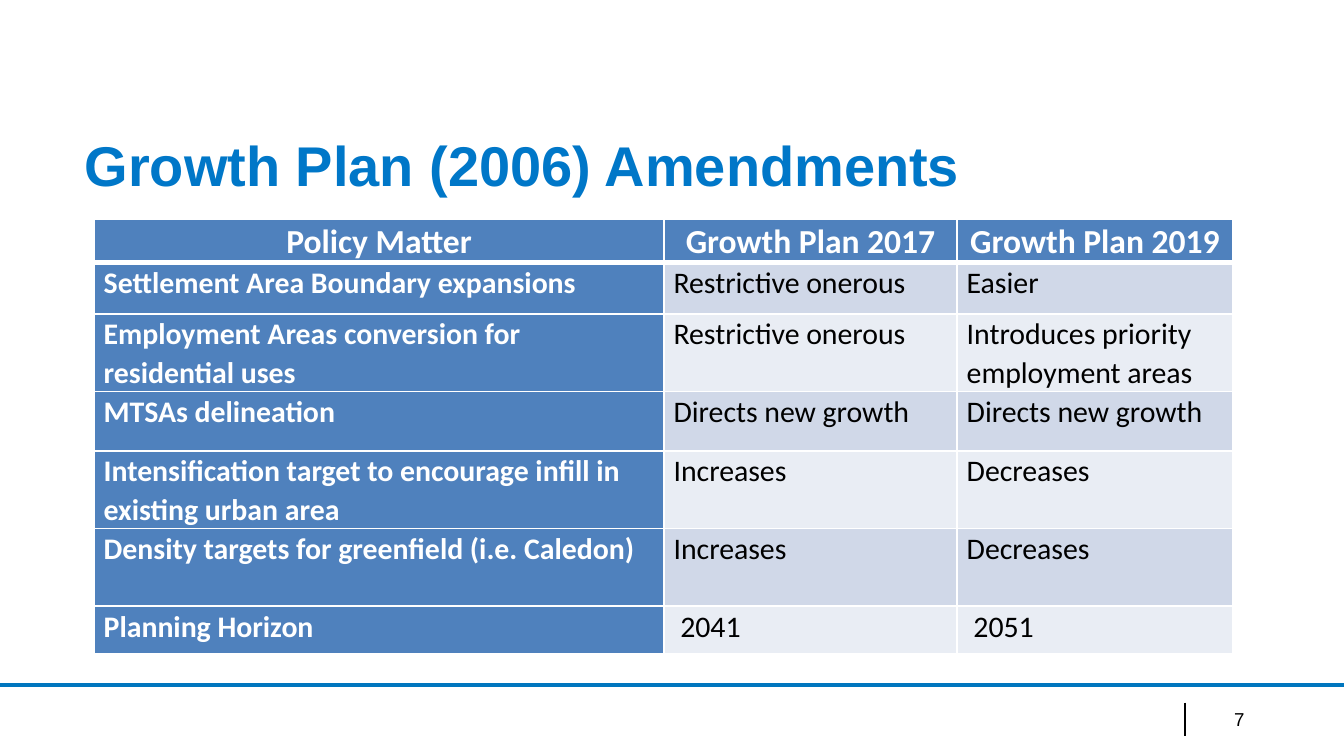
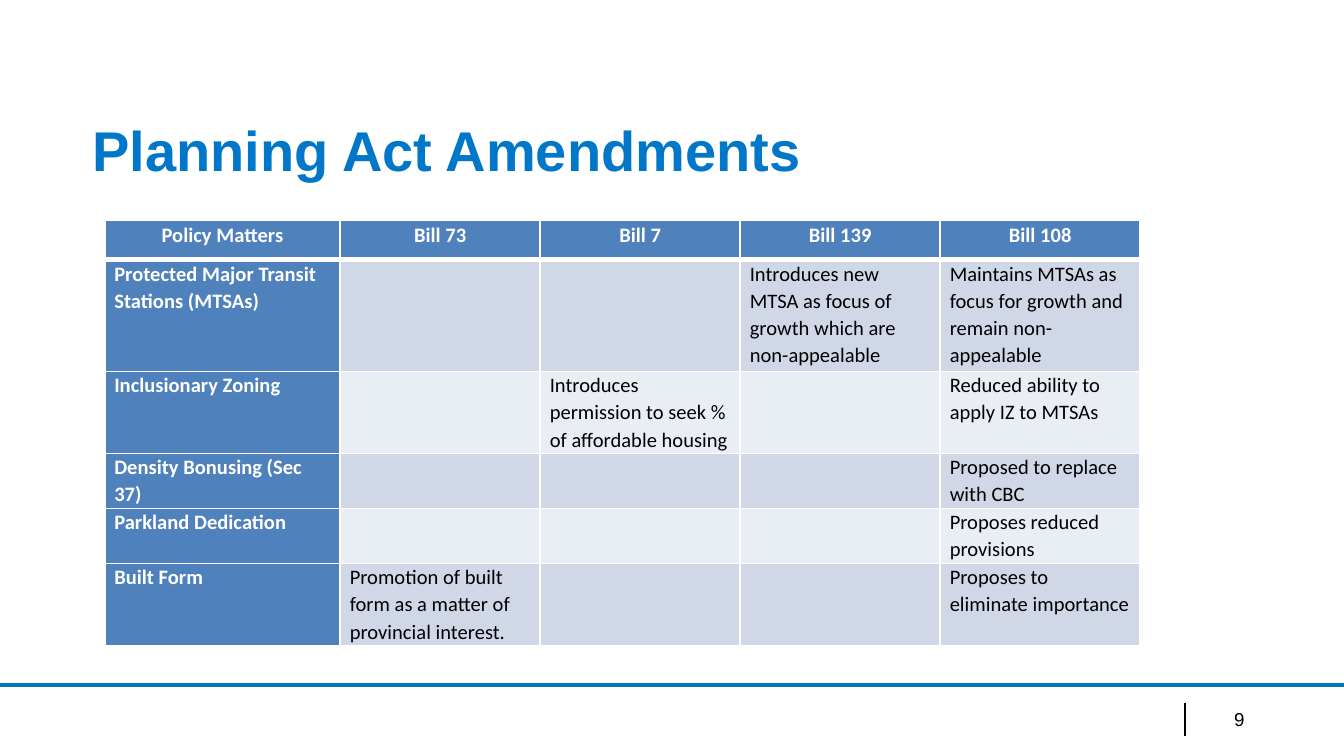
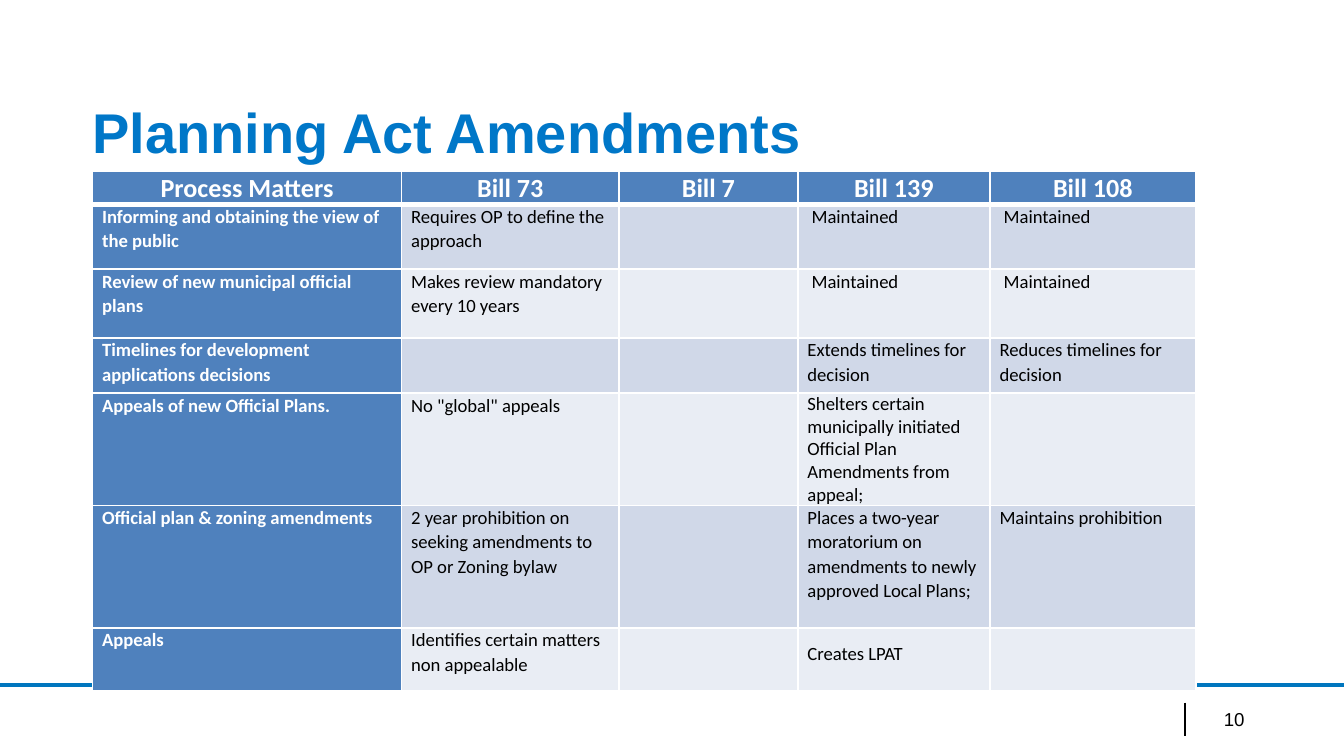
from dataclasses import dataclass

from lxml.etree import SubElement
from pptx import Presentation
from pptx.dml.color import RGBColor
from pptx.enum.shapes import MSO_CONNECTOR
from pptx.enum.text import MSO_ANCHOR as Anchor, PP_ALIGN as Align
from pptx.oxml.ns import qn
from pptx.util import Cm, Pt

TITLE_BLUE = RGBColor(0x00, 0x77, 0xC8)
RULE_BLUE = RGBColor(0x00, 0x76, 0xBE)
HEADER_BLUE = RGBColor(0x4F, 0x81, 0xBD)
BAND_DARK = RGBColor(0xD0, 0xD8, 0xE8)
BAND_LIGHT = RGBColor(0xE9, 0xED, 0xF4)
WHITE = RGBColor(0xFF, 0xFF, 0xFF)
BLACK = RGBColor(0x00, 0x00, 0x00)

SLIDE_WIDTH, SLIDE_HEIGHT = 25.4, 14.29
TITLE_FONT, TABLE_FONT = "Arial", "Calibri"
CELL_MARGIN = 0.18
LINE_SPACING = 1.07
THIN, THICK = 1, 3


@dataclass
class Cell:
    text: str
    line_spacing: float = LINE_SPACING
    margin_top: float = 0


@dataclass
class TableSlide:
    number: int
    title: str
    title_left: float
    title_top: float
    table_left: float
    table_top: float
    columns: list[float]
    rows: list[float]
    header_size: int
    body_size: int
    cells: list[list[str | Cell]]


SLIDES = [
    TableSlide(
        number=7, title="Growth Plan (2006) Amendments", title_left=1.6, title_top=2.36,
        table_left=1.78, table_top=4.14, columns=[10.77, 5.54, 5.21],
        rows=[0.82, 0.97, 1.47, 1.12, 1.47, 1.47, 0.89], header_size=18, body_size=16,
        cells=[
            ["Policy Matter", "Growth Plan 2017", "Growth Plan 2019"],
            ["Settlement Area Boundary expansions", "Restrictive onerous", "Easier"],
            ["Employment Areas conversion for residential uses", "Restrictive onerous",
             "Introduces priority employment areas"],
            ["MTSAs delineation", "Directs new growth", "Directs new growth"],
            ["Intensification target to encourage infill in existing urban area",
             "Increases", "Decreases"],
            ["Density targets for greenfield (i.e. Caledon)", "Increases", "Decreases"],
            ["Planning Horizon", " 2041", " 2051"],
        ],
    ),
    TableSlide(
        number=9, title="Planning Act Amendments", title_left=1.75, title_top=2.08,
        table_left=1.98, table_top=4.17, columns=[4.45] + [3.78] * 4,
        rows=[0.74, 2.11, 1.55, 1.04, 1.04, 1.55], header_size=11, body_size=11,
        cells=[
            ["Policy Matters", "Bill 73", "Bill 7", "Bill 139", "Bill 108"],
            ["Protected Major Transit Stations (MTSAs)", "", "",
             "Introduces new MTSA as focus of growth which are non-appealable",
             "Maintains MTSAs as focus for growth and remain non-appealable"],
            ["Inclusionary Zoning", "",
             "Introduces permission to seek % of affordable housing", "",
             "Reduced ability to apply IZ to MTSAs"],
            ["Density Bonusing (Sec 37)", "", "", "", "Proposed to replace with CBC"],
            ["Parkland Dedication", "", "", "", "Proposes reduced provisions"],
            ["Built Form", "Promotion of built form as a matter of provincial interest.",
             "", "", "Proposes to eliminate importance"],
        ],
    ),
    TableSlide(
        number=10, title="Planning Act Amendments", title_left=1.75, title_top=1.73,
        table_left=1.75, table_top=3.23, columns=[5.84, 4.11, 3.38, 3.63, 3.89],
        rows=[0.62, 1.22, 1.3, 1.04, 2.13, 2.31, 1.19], header_size=14, body_size=10,
        cells=[
            ["Process Matters", "Bill 73", "Bill 7", "Bill 139", "Bill 108"],
            ["Informing and obtaining the view of the public",
             "Requires OP to define the approach", "", " Maintained", " Maintained"],
            ["Review of new municipal official plans",
             "Makes review mandatory every 10 years", "", " Maintained", " Maintained"],
            ["Timelines for development applications decisions", "", "",
             "Extends timelines for decision", "Reduces timelines for decision"],
            ["Appeals of new Official Plans.", 'No "global" appeals', "",
             Cell("Shelters certain municipally initiated Official Plan "
                  "Amendments from appeal;", line_spacing=1), ""],
            ["Official plan & zoning amendments",
             "2 year prohibition on seeking amendments to OP or Zoning bylaw", "",
             "Places a two-year moratorium on amendments to newly approved Local Plans;",
             "Maintains prohibition"],
            ["Appeals", "Identifies certain matters non appealable", "",
             Cell("Creates LPAT", line_spacing=1, margin_top=0.28), ""],
        ],
    ),
]


def write_text(text_frame, text: str, *, size: float, font: str, color: RGBColor,
               bold: bool = False, align: Align = Align.LEFT,
               line_spacing: float = 1) -> None:
    text_frame.word_wrap = True
    paragraph = text_frame.paragraphs[0]
    paragraph.alignment = align
    paragraph.line_spacing = line_spacing
    paragraph.font.size = Pt(size)
    if not text:
        return
    run = paragraph.add_run()
    run.text = text
    run.font.size = Pt(size)
    run.font.name = font
    run.font.bold = bold
    run.font.color.rgb = color


def add_text_box(slide, text: str, left: float, top: float, width: float, height: float,
                 *, anchor: Anchor = Anchor.TOP, margin_top: float = 0, **text_format) -> None:
    text_frame = slide.shapes.add_textbox(Cm(left), Cm(top), Cm(width), Cm(height)).text_frame
    text_frame.margin_left = text_frame.margin_right = text_frame.margin_bottom = 0
    text_frame.margin_top = Cm(margin_top)
    text_frame.vertical_anchor = anchor
    write_text(text_frame, text, **text_format)


def add_line(slide, start: tuple[float, float], end: tuple[float, float],
             color: RGBColor, width: float) -> None:
    points = [Cm(value) for value in (*start, *end)]
    connector = slide.shapes.add_connector(MSO_CONNECTOR.STRAIGHT, *points)
    connector.line.color.rgb = color
    connector.line.width = Pt(width)
    SubElement(connector.element.spPr, qn("a:effectLst"))


def set_borders(cell, top: float, bottom: float) -> None:
    properties = cell._tc.get_or_add_tcPr()
    for side, width in (("L", THIN), ("R", THIN), ("T", top), ("B", bottom)):
        border = SubElement(properties, qn(f"a:ln{side}"), w=str(Pt(width)))
        fill = SubElement(border, qn("a:solidFill"))
        SubElement(fill, qn("a:srgbClr"), val=str(WHITE))


def format_cell(cell, entry: Cell, row: int, column: int, size: float) -> None:
    is_header = row == 0
    is_heading = is_header or column == 0
    set_borders(cell, top=THICK if row == 1 else THIN, bottom=THICK if is_header else THIN)
    cell.fill.solid()
    band = BAND_DARK if row % 2 else BAND_LIGHT
    cell.fill.fore_color.rgb = HEADER_BLUE if is_heading else band
    cell.margin_left = cell.margin_right = Cm(CELL_MARGIN)
    cell.margin_top, cell.margin_bottom = Cm(entry.margin_top), 0
    write_text(cell.text_frame, entry.text, size=size, font=TABLE_FONT,
               color=WHITE if is_heading else BLACK, bold=is_heading,
               align=Align.CENTER if is_header else Align.LEFT,
               line_spacing=entry.line_spacing)


def add_policy_table(slide, content: TableSlide) -> None:
    table = slide.shapes.add_table(
        len(content.rows), len(content.columns), Cm(content.table_left),
        Cm(content.table_top), Cm(sum(content.columns)), Cm(sum(content.rows))).table
    table.first_col = True
    for column, width in zip(table.columns, content.columns):
        column.width = Cm(width)
    for row, height in zip(table.rows, content.rows):
        row.height = Cm(height)
    for row_index, entries in enumerate(content.cells):
        size = content.body_size if row_index else content.header_size
        for column_index, entry in enumerate(entries):
            entry = entry if isinstance(entry, Cell) else Cell(entry)
            format_cell(table.cell(row_index, column_index), entry,
                        row_index, column_index, size)


def add_table_slide(presentation, content: TableSlide) -> None:
    slide = presentation.slides.add_slide(presentation.slide_layouts[6])
    add_line(slide, (0, 12.95), (SLIDE_WIDTH, 12.95), RULE_BLUE, 2)
    add_line(slide, (22.4, 13.28), (22.4, 13.92), BLACK, 1)
    add_text_box(slide, content.title, content.title_left, content.title_top, 21.69, 1.75,
                 margin_top=0.11, size=30, font=TITLE_FONT, color=TITLE_BLUE, bold=True)
    add_text_box(slide, str(content.number), 22.61, 13.06, 0.91, 1.07, anchor=Anchor.MIDDLE,
                 size=10, font=TITLE_FONT, color=BLACK, align=Align.RIGHT)
    add_policy_table(slide, content)


def main() -> None:
    presentation = Presentation()
    presentation.slide_width = Cm(SLIDE_WIDTH)
    presentation.slide_height = Cm(SLIDE_HEIGHT)
    for content in SLIDES:
        add_table_slide(presentation, content)
    presentation.save("out.pptx")


if __name__ == "__main__":
    main()
